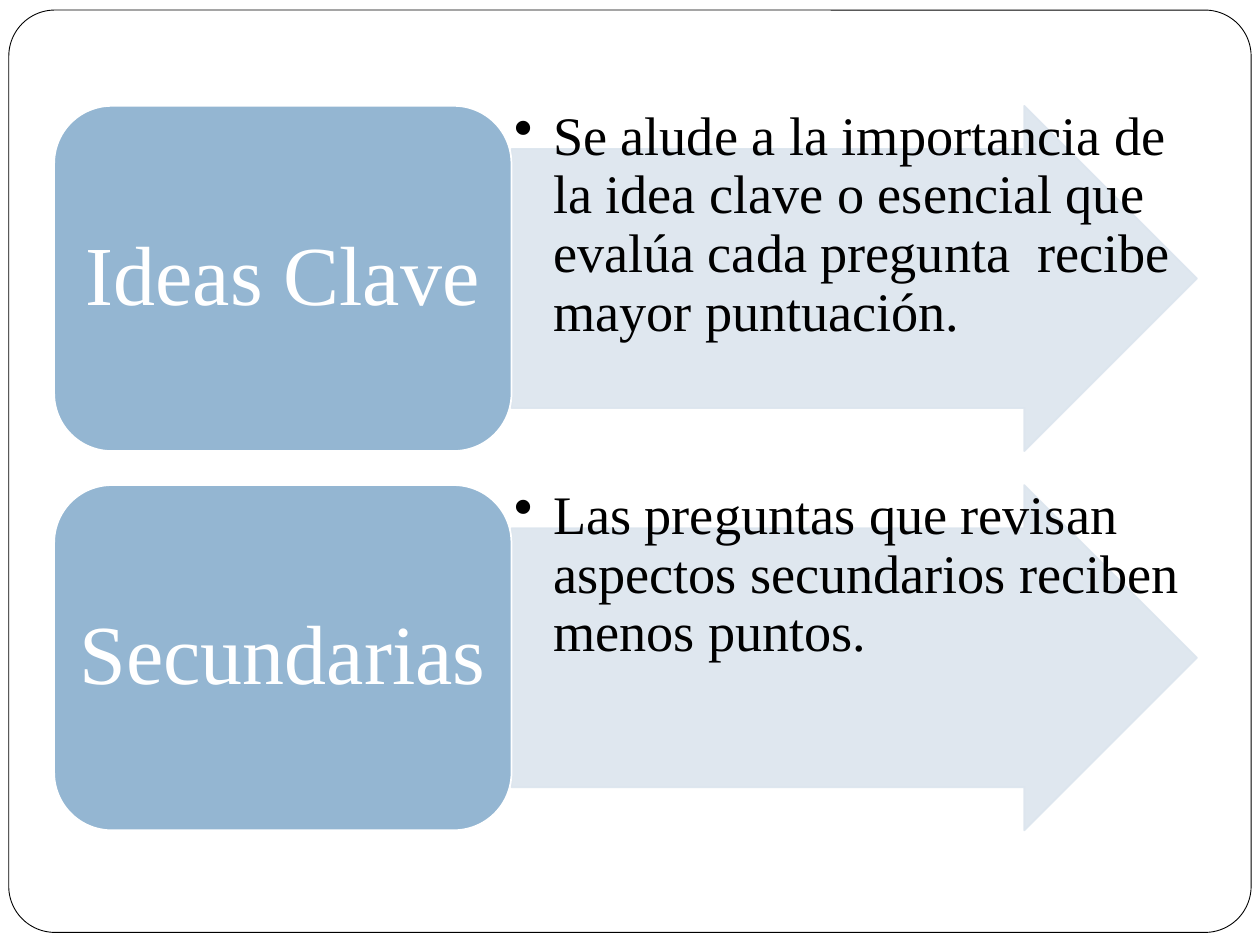
from dataclasses import dataclass

from lxml import etree
from pptx import Presentation
from pptx import util as u
from pptx.dml import color
from pptx.enum import shapes, text
from pptx.oxml import ns


@dataclass(frozen=True)
class Theme:
    font: str = "Times New Roman"
    paper: str = "FFFFFF"
    frame: str = "000000"
    ink: str = "000000"
    block: str = "94B6D2"
    arrow: str = "DCE5EE"
    arrow_alpha: int = 90
    block_size: int = 48
    body_size: int = 31


class Deck:
    COLUMNS, ROWS = 100, 75

    def __init__(self, prs, theme):
        self.theme = theme
        self.cell_w = prs.slide_width / self.COLUMNS
        self.cell_h = prs.slide_height / self.ROWS
        self.s = prs.slides.add_slide(prs.slide_layouts[6])

    def box(self, col, row, cols, rows):
        return (int(col * self.cell_w), int(row * self.cell_h),
                int(cols * self.cell_w), int(rows * self.cell_h))

    def shape(self, kind, area, fill, line, width, adjustments=(), alpha=None):
        sp = self.s.shapes.add_shape(kind, *self.box(*area))
        sp.shadow.inherit = False
        for i, value in enumerate(adjustments):
            sp.adjustments[i] = value
        sp.fill.solid()
        sp.fill.fore_color.rgb = color.RGBColor.from_string(fill)
        sp.line.color.rgb = color.RGBColor.from_string(line)
        sp.line.width = u.Pt(width)
        if alpha is not None:
            for clr in sp._element.spPr.iter(ns.qn("a:srgbClr")):
                etree.SubElement(clr, ns.qn("a:alpha"), val=str(alpha * 1000))
        return sp

    def label(self, sp, words, size, ink, anchor, align, inset_x, inset_y):
        tf = sp.text_frame
        tf.word_wrap = True
        tf.vertical_anchor = anchor
        tf.margin_left = tf.margin_right = u.Inches(inset_x)
        tf.margin_top = tf.margin_bottom = u.Inches(inset_y)
        p = tf.paragraphs[0]
        p.text = words
        p.alignment = align
        p.line_spacing = 0.9
        r = p.runs[0]
        r.font.name = self.theme.font
        r.font.size = u.Pt(size)
        r.font.color.rgb = color.RGBColor.from_string(ink)
        return p

    def frame(self, area):
        t = self.theme
        self.shape(shapes.MSO_SHAPE.ROUNDED_RECTANGLE, area, t.paper, t.frame, 0.5, [0.05])

    def arrow(self, area):
        t = self.theme
        self.shape(shapes.MSO_SHAPE.RIGHT_ARROW, area, t.arrow, t.arrow, 1,
                   [0.75, 0.5], t.arrow_alpha)

    def bullet(self, area, words):
        t = self.theme
        sp = self.s.shapes.add_textbox(*self.box(*area))
        p = self.label(sp, words, t.body_size, t.ink, text.MSO_ANCHOR.TOP,
                       text.PP_ALIGN.LEFT, 0.02, 0.02)
        pPr = p._p.get_or_add_pPr()
        indent = u.Inches(0.31)
        pPr.set("marL", str(indent))
        pPr.set("indent", str(-indent))
        etree.SubElement(pPr, ns.qn("a:buChar"), char="•")

    def block(self, area, words):
        t = self.theme
        sp = self.shape(shapes.MSO_SHAPE.ROUNDED_RECTANGLE, area, t.block, t.paper, 1)
        self.label(sp, words, t.block_size, t.paper, text.MSO_ANCHOR.MIDDLE,
                   text.PP_ALIGN.CENTER, 0.05, 0)


IDEAS = [
    ("Ideas Clave", "Se alude a la importancia de la idea clave o esencial que evalúa "
                    "cada pregunta  recibe mayor puntuación."),
    ("Secundarias", "Las preguntas que revisan aspectos secundarios reciben menos puntos."),
]
LEFT, TOP = 4.3, 8.4
BLOCK_COLS, ARROW_COLS = 36.3, 54.4
BAND_ROWS, BAND_STEP = 27.4, 30.1


def main():
    prs = Presentation()
    prs.slide_width, prs.slide_height = u.Inches(10), u.Inches(7.5)
    deck = Deck(prs, Theme())
    deck.frame((0.7, 0.8, 98.6, 73.2))
    for i, (name, detail) in enumerate(IDEAS):
        row = TOP + i * BAND_STEP
        arrow_area = (LEFT + BLOCK_COLS, row, ARROW_COLS, BAND_ROWS)
        deck.arrow(arrow_area)
        deck.bullet(arrow_area, detail)
        deck.block((LEFT, row, BLOCK_COLS, BAND_ROWS), name)
    prs.save("out.pptx")


if __name__ == "__main__":
    main()
